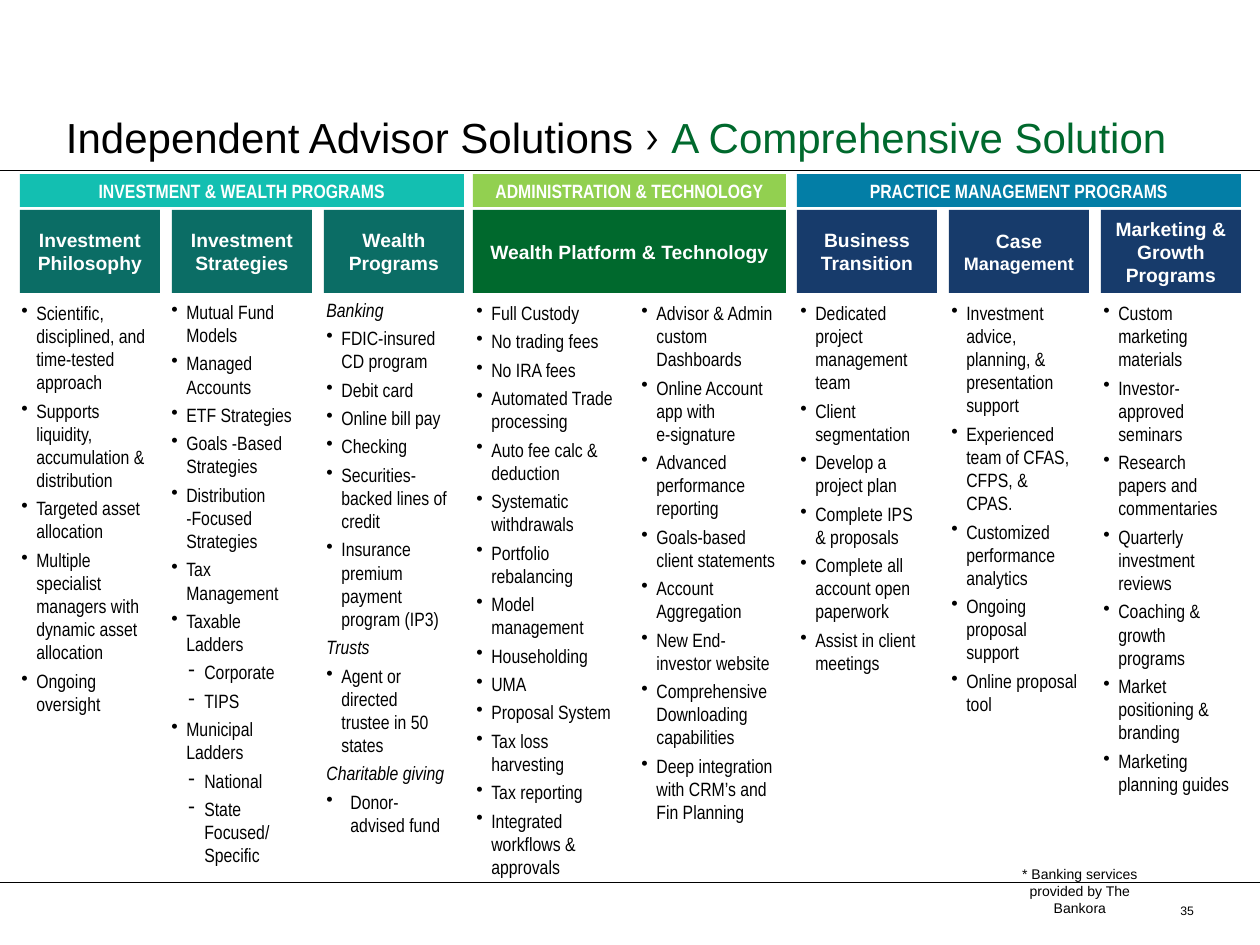
from dataclasses import dataclass

from lxml import etree
from pptx import Presentation
from pptx import util as u
from pptx.dml.color import RGBColor
from pptx.enum import shapes, text
from pptx.oxml import ns


@dataclass(frozen=True)
class Theme:
    sans: str = "Arial"
    narrow: str = "Arial Narrow"
    accent: str = "Montserrat"
    black: str = "000000"
    white: str = "FFFFFF"
    green: str = "00692D"
    lime: str = "92D050"
    aqua: str = "13BFB1"
    teal: str = "0B6D65"
    blue: str = "037EA6"
    navy: str = "173B6B"
    title: float = 24
    chevron: float = 28
    body: float = 11
    tight: float = 10.3
    note: float = 8
    number: float = 7


theme = Theme()
SCALE = u.Inches(1) / 126


def px(*lengths):
    return [u.Emu(round(length * SCALE)) for length in lengths]


def write(para, words, font=theme.sans, size=theme.body, color=theme.black, bold=False,
          italic=False, align=None, after=None, bullet=None, margin=0, hang=0):
    if align is not None:
        para.alignment = align
    if after is not None:
        para.space_after = u.Pt(after)
    if bullet:
        properties = para._p.get_or_add_pPr()
        left, back = px(margin, hang)
        properties.set("marL", str(left))
        properties.set("indent", str(-back))
        etree.SubElement(properties, ns.qn("a:buChar")).set("char", bullet)
    for index, line in enumerate(words.split("\n")):
        if index:
            para.add_line_break()
        span = para.add_run()
        span.text = line
        span.font.name = font
        span.font.size = u.Pt(size)
        span.font.bold = bold
        span.font.italic = italic
        span.font.color.rgb = RGBColor.from_string(color)


STYLES = {
    "item": dict(bullet="•", margin=15, hang=15),
    "wide": dict(bullet="•", margin=24, hang=24),
    "dash": dict(bullet="-", margin=33, hang=16),
    "heading": dict(italic=True),
}

COLUMNS = [
    ((9, 295, 151, 431), [
        "Scientific, disciplined, and time-tested approach",
        "Supports liquidity, accumulation & distribution",
        "Targeted asset allocation",
        "Multiple specialist managers with dynamic asset allocation",
        "Ongoing oversight"]),
    ((159, 294, 154, 585), [
        "Mutual Fund Models", "Managed Accounts", "ETF Strategies",
        "Goals -Based Strategies", "Distribution -Focused Strategies",
        "Tax Management", "Taxable Ladders", ("dash", "Corporate"), ("dash", "TIPS"),
        "Municipal Ladders", ("dash", "National"), ("dash", "State Focused/ Specific")]),
    ((314, 292, 147, 556), [
        ("heading", "Banking"), "FDIC-insured CD program", "Debit card",
        "Online bill pay", "Checking", "Securities-backed lines of credit",
        "Insurance premium payment program (IP3)",
        ("heading", "Trusts"), "Agent or directed trustee in 50 states",
        ("heading", "Charitable giving"), ("wide", "Donor- advised fund")]),
    ((464, 295, 165, 624), [
        "Full Custody", "No trading fees", "No IRA fees", "Automated Trade processing",
        "Auto fee calc & deduction", "Systematic withdrawals", "Portfolio rebalancing",
        "Model management", "Householding", "UMA", "Proposal System",
        "Tax loss harvesting", "Tax reporting", "Integrated workflows & approvals"]),
    ((629, 295, 159, 563), [
        "Advisor & Admin custom Dashboards", "Online Account app with\ne-signature",
        "Advanced performance reporting", "Goals-based client statements",
        "Account Aggregation", "New End-investor website",
        "Comprehensive Downloading capabilities",
        "Deep integration with CRM’s and Fin Planning"]),
    ((788, 295, 150, 389), [
        "Dedicated project management team", "Client segmentation",
        "Develop a project plan", "Complete IPS & proposals",
        "Complete all account open paperwork", "Assist in client meetings"]),
    ((939, 295, 151, 459), [
        "Investment advice, planning, & presentation support",
        "Experienced team of CFAS, CFPS, & CPAS.", "Customized performance analytics",
        "Ongoing proposal support", "Online proposal tool"]),
    ((1091, 295, 152, 512), [
        "Custom marketing materials", "Investor- approved seminars",
        "Research papers and commentaries", "Quarterly investment reviews",
        "Coaching & growth programs", "Market positioning & branding",
        "Marketing planning guides"]),
]

PROGRAMS = [
    (20, 444, 140, "INVESTMENT & WEALTH PROGRAMS", theme.aqua, theme.teal,
     ["Investment Philosophy", "Investment Strategies", "Wealth Programs"]),
    (473, 313, 313, "ADMINISTRATION & TECHNOLOGY", theme.lime, theme.green,
     ["Wealth Platform & Technology"]),
    (797, 444, 140, "PRACTICE MANAGEMENT PROGRAMS", theme.blue, theme.navy,
     ["Business Transition", "Case Management", "Marketing & Growth Programs"]),
]
STEP = 152

deck = Presentation()
deck.slide_width, deck.slide_height = px(1260, 945)
page = deck.slides.add_slide(deck.slide_layouts[5])

for y in (170, 882):
    rule = page.shapes.add_connector(shapes.MSO_CONNECTOR.STRAIGHT, *px(0, y, 1260, y))
    rule.line.color.rgb = RGBColor.from_string(theme.black)
    rule.line.width = u.Pt(0.25)
    etree.SubElement(rule._element.spPr, ns.qn("a:effectLst"))

title = page.shapes.title
title.left, title.top, title.width, title.height = px(66, 63, 1165, 107)
frame = title.text_frame
frame.auto_size = text.MSO_AUTO_SIZE.NONE
frame.vertical_anchor = text.MSO_ANCHOR.BOTTOM
frame.margin_left = frame.margin_top = frame.margin_right = 0
frame.margin_bottom = u.Inches(0.05)
for words, font, size, color in [
    ("Independent Advisor Solutions ", theme.sans, theme.title, theme.black),
    ("›", theme.accent, theme.chevron, theme.black),
    (" ", theme.sans, theme.title, theme.black),
    ("A Comprehensive Solution", theme.sans, theme.title, theme.green),
]:
    write(frame.paragraphs[0], words, font=font, size=size, color=color,
          align=text.PP_ALIGN.LEFT)

for place, items in COLUMNS:
    frame = page.shapes.add_textbox(*px(*place)).text_frame
    frame.word_wrap = True
    for index, item in enumerate(items):
        style, words = item if isinstance(item, tuple) else ("item", item)
        para = frame.add_paragraph() if index else frame.paragraphs[0]
        write(para, words, font=theme.narrow, after=3, **STYLES[style])

for left, width, cell, heading, bar_color, cell_color, names in PROGRAMS:
    group = page.shapes.add_group_shape()
    blocks = [(heading, left, 174, width, 33, bar_color, theme.narrow)]
    blocks += [(name, left + STEP * index, 210, cell, 83, cell_color, theme.sans)
               for index, name in enumerate(names)]
    for words, x, y, w, h, color, font in blocks:
        box = group.shapes.add_shape(shapes.MSO_SHAPE.RECTANGLE, *px(x, y, w, h))
        box.shadow.inherit = False
        box.fill.solid()
        box.fill.fore_color.rgb = RGBColor.from_string(color)
        box.line.fill.background()
        frame = box.text_frame
        frame.word_wrap = True
        frame.vertical_anchor = text.MSO_ANCHOR.MIDDLE
        spans = [(words, theme.body)]
        if words == "Case Management":
            spans = [("Case ", theme.body), ("Management", theme.tight)]
        for part, size in spans:
            write(frame.paragraphs[0], part, font=font, size=size, color=theme.white,
                  bold=True, align=text.PP_ALIGN.CENTER)

for words, place, size, align, wrap in [
    ("* Banking services provided by The Bankora", (1017, 866, 126, 126), theme.note,
     text.PP_ALIGN.CENTER, False),
    ("35", (1144, 903, 50, 38), theme.number, text.PP_ALIGN.RIGHT, True),
]:
    frame = page.shapes.add_textbox(*px(*place)).text_frame
    frame.margin_left = frame.margin_top = frame.margin_right = frame.margin_bottom = 0
    frame.word_wrap = wrap
    write(frame.paragraphs[0], words, size=size, align=align)

deck.save("out.pptx")
